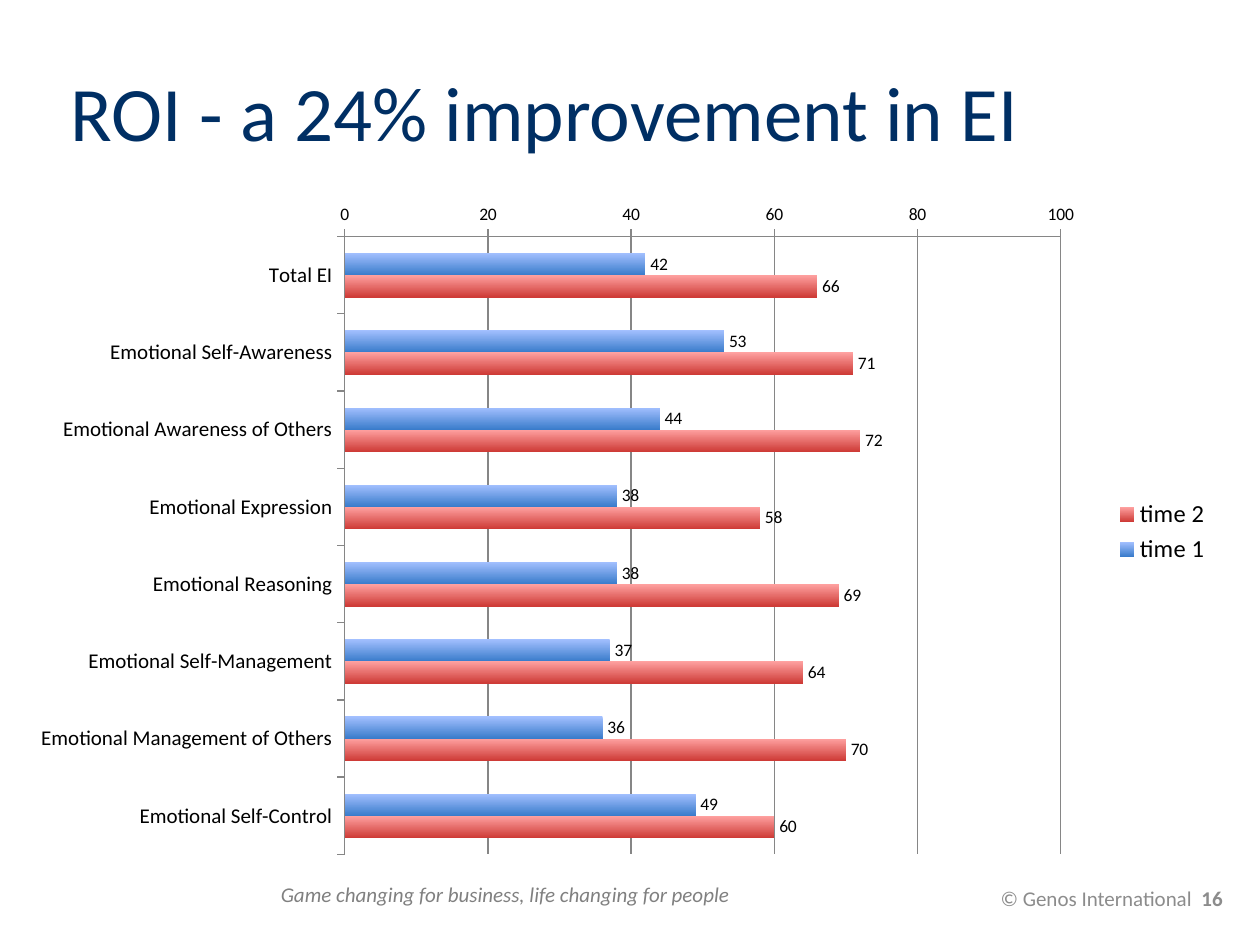
import lxml.etree
import pptx
import pptx.chart.data
import pptx.dml.color
import pptx.enum.chart
import pptx.enum.text
import pptx.oxml.ns
import pptx.util

Inches = pptx.util.Inches
Align = pptx.enum.text.PP_ALIGN
Anchor = pptx.enum.text.MSO_ANCHOR
FONT = "Calibri"
SCORES = [
    ("Total EI", 42, 66),
    ("Emotional Self-Awareness", 53, 71),
    ("Emotional Awareness of Others", 44, 72),
    ("Emotional Expression", 38, 58),
    ("Emotional Reasoning", 38, 69),
    ("Emotional Self-Management", 37, 64),
    ("Emotional Management of Others", 36, 70),
    ("Emotional Self-Control", 49, 60),
]
SHADES = [("A3C0FF", "3A7CCB"), ("FFA2A1", "CE3B37")]


def paint(target, color):
    """Set a colour format to a hex colour."""
    target.rgb = pptx.dml.color.RGBColor.from_string(color)


def style(font, size, color="000000"):
    """Set the face, size and colour of a font."""
    font.name = FONT
    font.size = pptx.util.Pt(size)
    paint(font.color, color)


def place(shape, left, top, width, height):
    """Move and size a shape."""
    shape.left, shape.top = Inches(left), Inches(top)
    shape.width, shape.height = Inches(width), Inches(height)


def add_title(slide, text):
    """Fill the title placeholder."""
    title = slide.shapes.title
    place(title, 0.46, 0.25, 9.45, 1.25)
    frame = title.text_frame
    frame.text = text
    frame.vertical_anchor = Anchor.MIDDLE
    frame.paragraphs[0].alignment = Align.LEFT
    style(frame.paragraphs[0].font, 44, "002F64")


def add_note(slide, box, parts, color, align=Align.LEFT, anchor=Anchor.TOP):
    """Add a footer line and return its runs."""
    frame = slide.shapes.add_textbox(*map(Inches, box)).text_frame
    frame.word_wrap = True
    frame.vertical_anchor = anchor
    line = frame.paragraphs[0]
    line.alignment = align
    for part in parts:
        line.add_run().text = part
    style(line.font, 12, color)
    return line.runs


def set_layout(parent, index, box, inner=False):
    """Give a chart part a manual layout in fractions of the chart."""
    qn = pptx.oxml.ns.qn
    for old in parent.findall(qn("c:layout")):
        parent.remove(old)
    layout = lxml.etree.Element(qn("c:layout"))
    manual = lxml.etree.SubElement(layout, qn("c:manualLayout"))
    items = [("layoutTarget", "inner")] if inner else []
    items += [("xMode", "edge"), ("yMode", "edge")]
    items += zip("xywh", box)
    for name, value in items:
        lxml.etree.SubElement(manual, qn("c:" + name)).set("val", str(value))
    parent.insert(index, layout)


def style_axis(axis, size):
    """Set the ticks, line and labels of an axis."""
    axis.major_tick_mark = pptx.enum.chart.XL_TICK_MARK.OUTSIDE
    axis.minor_tick_mark = pptx.enum.chart.XL_TICK_MARK.NONE
    paint(axis.format.line.color, "868686")
    style(axis.tick_labels.font, size)


def style_bars(series, shades):
    """Give a series a vertical gradient and value labels."""
    fill = series.format.fill
    fill.gradient()
    fill.gradient_angle = 270
    for stop, shade in zip(fill.gradient_stops, shades):
        paint(stop.color, shade)
    labels = series.data_labels
    labels.show_value = True
    labels.position = pptx.enum.chart.XL_LABEL_POSITION.OUTSIDE_END
    style(labels.font, 10)


def add_scores(slide):
    """Add the bar chart of scores at both times."""
    names, first, second = zip(*SCORES)
    data = pptx.chart.data.CategoryChartData(number_format="0")
    data.categories = names
    data.add_series("time 1", first)
    data.add_series("time 2", second)
    kind = pptx.enum.chart.XL_CHART_TYPE.BAR_CLUSTERED
    box = map(Inches, (0.18, 1.5, 9.47, 5.39))
    chart = slide.shapes.add_chart(kind, *box, data).chart
    chart.has_title = False
    style(chart.font, 10)

    plot = chart.plots[0]
    plot.gap_width = 150
    plot.overlap = 0
    plot.vary_by_categories = False
    for series, shades in zip(plot.series, SHADES):
        style_bars(series, shades)

    style_axis(chart.category_axis, 12)
    chart.category_axis.reverse_order = True
    scale = chart.value_axis
    style_axis(scale, 10)
    scale.minimum_scale, scale.maximum_scale = 0, 100
    scale.major_unit = 20
    scale.has_major_gridlines = True
    paint(scale.major_gridlines.format.line.color, "868686")
    scale.tick_labels.number_format = "0"
    scale.tick_labels.number_format_is_linked = False

    chart.has_legend = True
    legend = chart.legend
    legend.position = pptx.enum.chart.XL_LEGEND_POSITION.RIGHT
    legend.include_in_layout = False
    style(legend.font, 14)
    area = chart._chartSpace.find(".//" + pptx.oxml.ns.qn("c:plotArea"))
    set_layout(area, 0, (0.27, 0.07, 0.6, 0.91), inner=True)
    set_layout(legend._element, 1, (0.91, 0.45, 0.09, 0.11))


def main():
    """Build and save the slide."""
    deck = pptx.Presentation()
    deck.slide_width, deck.slide_height = Inches(10), Inches(7.5)
    slide = deck.slides.add_slide(deck.slide_layouts[5])
    credit = add_note(slide, (6.84, 7, 3, 0.25),
                      ["© Genos International  ", "16 "], "8C8C8C",
                      Align.RIGHT, Anchor.MIDDLE)
    credit[1].font.bold = True
    motto = add_note(slide, (2.13, 6.95, 6.41, 0.3),
                     ["Game changing for business, life changing for people"],
                     "808080")
    motto[0].font.italic = True
    add_scores(slide)
    add_title(slide, "ROI - a 24% improvement in EI")
    deck.save("out.pptx")


if __name__ == "__main__":
    main()
